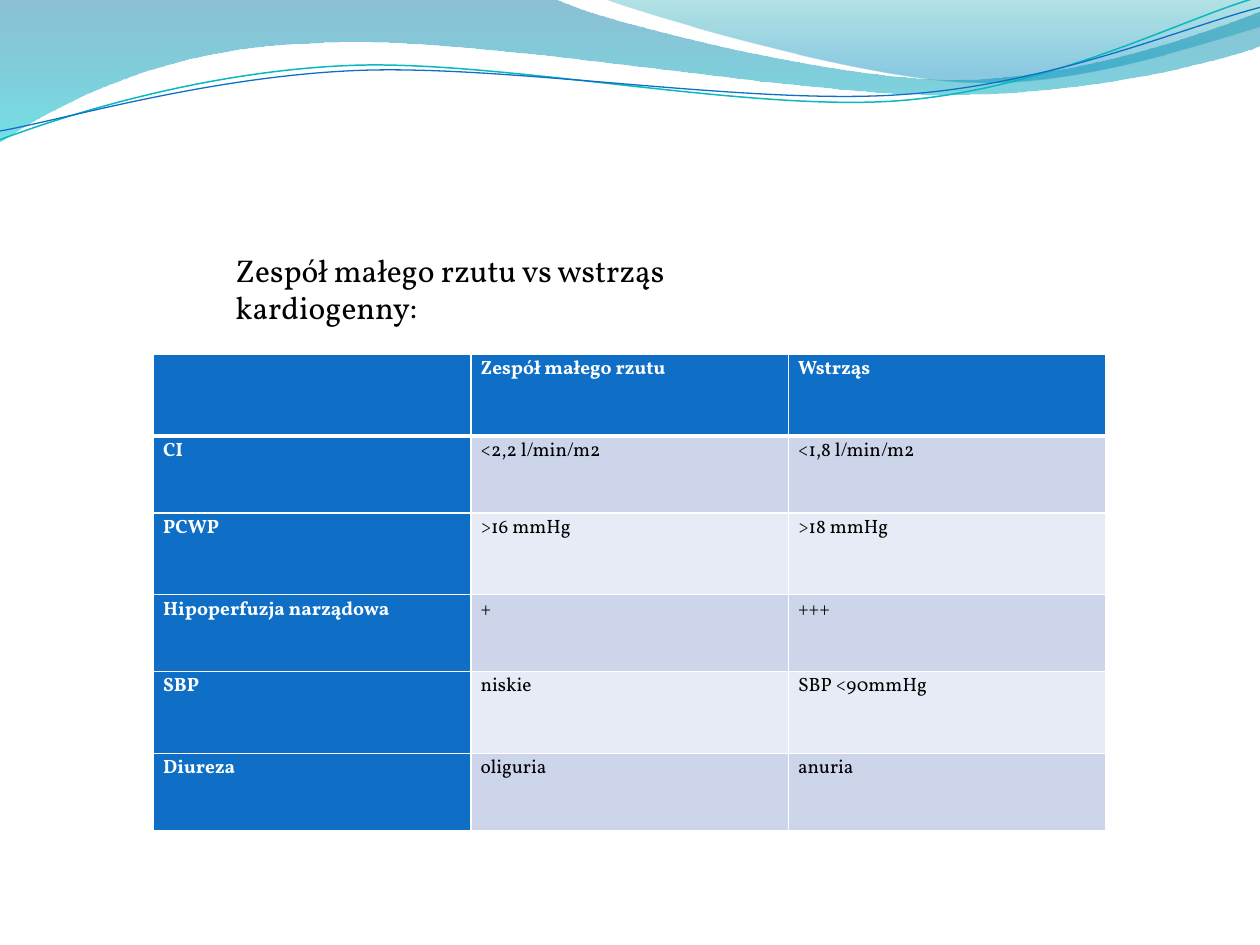
from dataclasses import dataclass
from math import cos, radians, sin

from lxml.etree import Element, SubElement
from pptx import Presentation
from pptx.dml.color import RGBColor as Rgb
from pptx.enum.text import MSO_AUTO_SIZE as AutoSize
from pptx.oxml.ns import qn
from pptx.util import Inches, Pt


@dataclass(frozen=True)
class Theme:
    """Colours, font and sizes of the slide."""
    font: str = "Vollkorn"
    title_size: float = 18
    cell_size: float = 11
    ink: str = "000000"
    paper: str = "FFFFFF"
    accent: str = "0F6FC6"
    bands: tuple = ("CCD5EA", "E7EBF5")
    teal: str = "0AB8BF"
    deep_wave: tuple = ((0, "0074A1", 45), (1, "00C6CF", 55))
    light_wave: tuple = ((0, "00A1A9", 30), (0.8, "008BBF", 45))
    thin: float = 1
    thick: float = 3


THEME = Theme()
STRAND_TILT = -2.7

DEEP_WAVE = [
    [(0, 0)], [(4.4, -0.01)],
    [(4.76, 0.17), (6.64, 0.63), (7.58, 0.63)],
    [(8.53, 0.63), (9.58, 0.26), (10, 0.09)], [(10.01, 0.36)],
    [(9.83, 0.44), (8.7, 0.76), (7.46, 0.75)],
    [(6.22, 0.75), (3.82, 0.28), (2.57, 0.34)],
    [(1.29, 0.36), (0.46, 0.83), (-0.01, 1.13)],
]
LIGHT_WAVE = [
    [(4.79, -0.01)],
    [(5.09, 0.11), (6.82, 0.62), (7.69, 0.65)],
    [(8.56, 0.69), (9.61, 0.32), (10, 0.21)], [(10, 0)],
]
TEAL_STRAND = [
    [(0, 1.11)],
    [(0.48, 0.93), (1.58, 0.57), (2.77, 0.52)],
    [(3.95, 0.47), (5.93, 0.89), (7.13, 0.8)],
    [(8.33, 0.71), (9.38, 0.15), (9.98, -0.02)],
]
BLUE_STRAND = [
    [(0, 1.04)],
    [(0.47, 0.96), (1.64, 0.61), (2.83, 0.56)],
    [(4.03, 0.51), (5.97, 0.84), (7.17, 0.75)],
    [(8.36, 0.67), (9.41, 0.21), (10, 0.06)],
]
COMPARISON = [
    ["", "Zespół małego rzutu", "Wstrząs"],
    ["CI", "<2,2 l/min/m2", "<1,8 l/min/m2"],
    ["PCWP", ">16 mmHg", ">18 mmHg"],
    ["Hipoperfuzja narządowa", "+", "+++"],
    ["SBP", "niskie", "SBP <90mmHg"],
    ["Diureza", "oliguria", "anuria"],
]


def level(segments, tilt):
    """Turn the segments back by the tilt around the middle of their ends."""
    (left, top), (right, bottom) = segments[0][0], segments[-1][-1]
    mid_x, mid_y = (left + right) / 2, (top + bottom) / 2
    c, s = cos(radians(-tilt)), sin(radians(-tilt))
    return [[(mid_x + (x - mid_x) * c - (y - mid_y) * s,
              mid_y + (x - mid_x) * s + (y - mid_y) * c) for x, y in segment]
            for segment in segments]


def add_outline(slide, segments, close):
    """Add a freeform whose three-point segments are Bezier curves."""
    start, *rest = [(Inches(x), Inches(y)) for segment in segments for x, y in segment]
    builder = slide.shapes.build_freeform(*start)
    builder.add_line_segments(rest, close=close)
    outline = builder.convert_to_shape()
    outline.shadow.inherit = False
    edges = iter(list(outline._element.spPr.iter(qn("a:lnTo"))))
    for segment in segments[1:]:
        group = [next(edges) for _ in segment]
        if len(group) == 3:
            curve = Element(qn("a:cubicBezTo"))
            group[0].addprevious(curve)
            for edge in group:
                curve.append(edge[0])
                edge.getparent().remove(edge)
    return outline


def add_wave(slide, segments, stops):
    """Add a translucent wave shaded from top to bottom."""
    wave = add_outline(slide, segments, True)
    wave.line.fill.background()
    wave.fill.gradient()
    wave.fill.gradient_angle = 270
    for stop, (position, colour, _) in zip(wave.fill.gradient_stops, stops):
        stop.position = position
        stop.color.rgb = Rgb.from_string(colour)
    tints = wave._element.spPr.iter(qn("a:srgbClr"))
    for tint, (_, _, opacity) in zip(list(tints), stops):
        SubElement(tint, qn("a:alpha"), val=str(opacity * 1000))


def add_strand(slide, segments, colour, width):
    """Add a thin, slightly tilted curved line."""
    strand = add_outline(slide, level(segments, STRAND_TILT), False)
    strand.rotation = STRAND_TILT
    strand.fill.background()
    strand.line.color.rgb = Rgb.from_string(colour)
    strand.line.width = Pt(width)


def add_run(paragraph, text, size, colour, bold=False):
    """Add one styled run to a paragraph."""
    run = paragraph.add_run()
    run.text = text
    run.font.name = THEME.font
    run.font.size = Pt(size)
    run.font.bold = bold
    run.font.color.rgb = Rgb.from_string(colour)


def add_title(slide, text):
    """Add the heading above the table."""
    title = slide.shapes.add_textbox(
        Inches(1.77), Inches(1.94), Inches(5.04), Inches(0.4))
    title.text_frame.word_wrap = True
    title.text_frame.auto_size = AutoSize.SHAPE_TO_FIT_TEXT
    add_run(title.text_frame.paragraphs[0], text, THEME.title_size, THEME.ink)


def add_border(cell, side, width):
    """Draw one white edge of a cell."""
    edge = SubElement(cell._tc.get_or_add_tcPr(), qn(f"a:ln{side}"), w=str(Pt(width)))
    paint = SubElement(edge, qn("a:solidFill"))
    SubElement(paint, qn("a:srgbClr"), val=THEME.paper)


def style_cell(cell, text, row, column):
    """Fill, frame and write one cell."""
    heading = row == 0 or column == 0
    for side in "LRTB":
        under_header = (row, side) in ((0, "B"), (1, "T"))
        add_border(cell, side, THEME.thick if under_header else THEME.thin)
    cell.fill.solid()
    cell.fill.fore_color.rgb = Rgb.from_string(
        THEME.accent if heading else THEME.bands[(row - 1) % 2])
    if text:
        cell.margin_left = cell.margin_right = Pt(5.4)
        cell.margin_top = cell.margin_bottom = 0
        paragraph = cell.text_frame.paragraphs[0]
        paragraph.line_spacing = 1.07
        add_run(paragraph, text, THEME.cell_size,
                THEME.paper if heading else THEME.ink, heading)


def add_comparison(slide, rows):
    """Add the table comparing the two states."""
    table = slide.shapes.add_table(
        len(rows), len(rows[0]),
        Inches(1.22), Inches(2.81), Inches(7.56), Inches(3.78)).table
    for column in table.columns:
        column.width = Inches(2.52)
    for index, texts in enumerate(rows):
        table.rows[index].height = Inches(0.61 if index % 2 else 0.65)
        for column, text in enumerate(texts):
            style_cell(table.cell(index, column), text, index, column)


def main():
    """Build and save the slide."""
    deck = Presentation()
    deck.slide_width, deck.slide_height = Inches(10), Inches(7.5)
    slide = deck.slides.add_slide(deck.slide_layouts[6])
    add_wave(slide, DEEP_WAVE, THEME.deep_wave)
    add_wave(slide, LIGHT_WAVE, THEME.light_wave)
    add_strand(slide, TEAL_STRAND, THEME.teal, 0.85)
    add_strand(slide, BLUE_STRAND, THEME.accent, 0.75)
    add_title(slide, "Zespół małego rzutu vs wstrząs kardiogenny:")
    add_comparison(slide, COMPARISON)
    deck.save("out.pptx")


if __name__ == "__main__":
    main()
